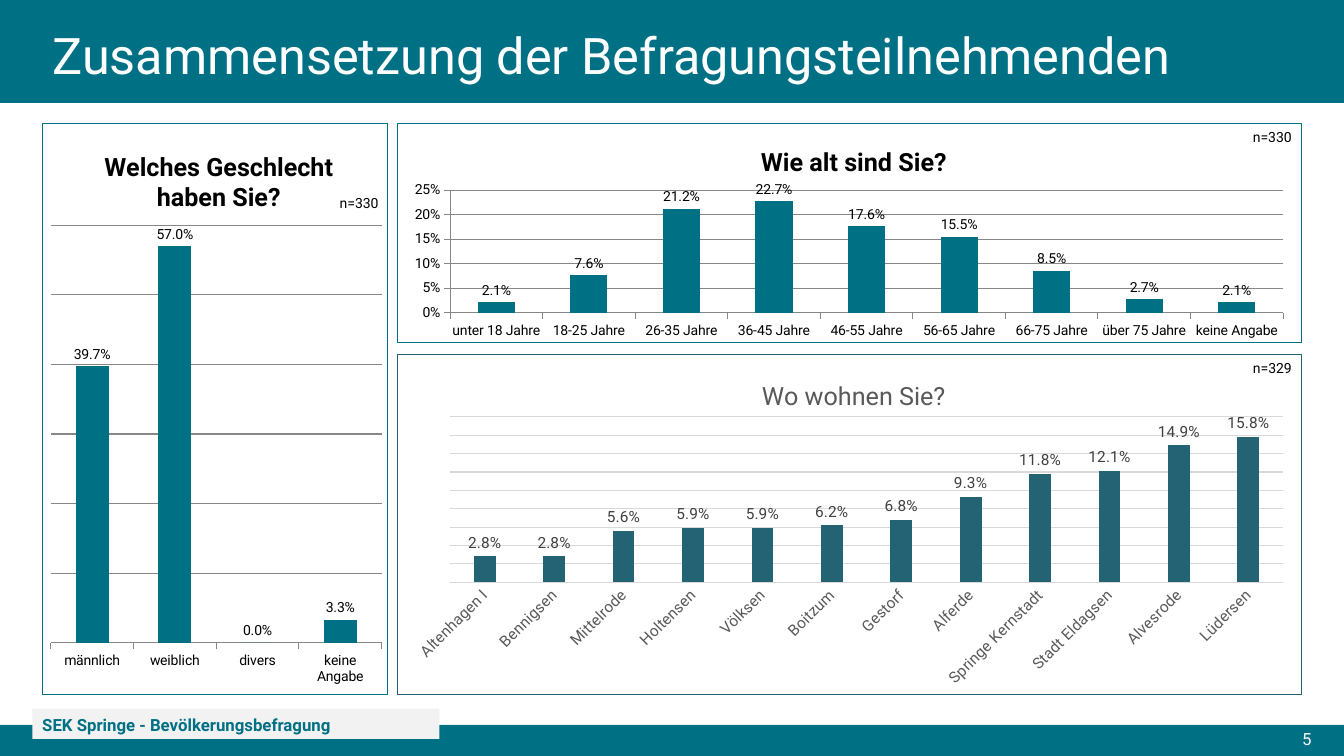
"""Builds the slide on who took part in the survey."""
from dataclasses import dataclass

import lxml.etree
import pptx
import pptx.chart.data
import pptx.dml.color
import pptx.enum.chart
import pptx.enum.shapes
import pptx.enum.text
import pptx.oxml
import pptx.oxml.ns
import pptx.util

FONT = "Roboto"
TEAL, PETROL, WHITE, BLACK = "007085", "246373", "FFFFFF", "000000"
SLIDE_WIDTH, SLIDE_HEIGHT = pptx.util.Inches(13.33), pptx.util.Inches(7.5)
ALIGN = pptx.enum.text.PP_ALIGN
MIDDLE = pptx.enum.text.MSO_ANCHOR.MIDDLE


@dataclass
class Area:
    """Left, top, width and height in percent of the enclosing frame."""
    left: float
    top: float
    width: float
    height: float

    def box(self) -> tuple[int, int, int, int]:
        """Returns the area as slide lengths."""
        return (int(SLIDE_WIDTH * self.left / 100), int(SLIDE_HEIGHT * self.top / 100),
                int(SLIDE_WIDTH * self.width / 100), int(SLIDE_HEIGHT * self.height / 100))


@dataclass
class Question:
    """One survey question with its column chart."""
    title: str
    area: Area
    plot: Area
    title_at: tuple[float, float]
    answers: dict[str, float]
    top: float
    step: float
    sample: str
    sample_area: Area
    color: str = TEAL
    grid: str = "878787"
    label_color: str = BLACK
    axis_color: str = BLACK
    title_color: str = BLACK
    bold: bool = True
    size: int = 10
    gap: int = 150
    overlap: int = 0
    scale: bool = False
    ticks: bool = True
    slanted: bool = False


QUESTIONS = [
    Question("Wo wohnen Sie?", Area(29.55, 46.8, 67.3, 45.2), Area(5.8, 18.4, 92.2, 48.5),
             (39.8, 6),
             {"Altenhagen I": 0.028, "Bennigsen": 0.028, "Mittelrode": 0.056,
              "Holtensen": 0.059, "Völksen": 0.059, "Boitzum": 0.062, "Gestorf": 0.068,
              "Alferde": 0.093, "Springe Kernstadt": 0.118, "Stadt Eldagsen": 0.121,
              "Alvesrode": 0.149, "Lüdersen": 0.158},
             0.18, 0.02, "n=329", Area(91.75, 46.93, 5.1, 3.6), color=PETROL, grid="D9D9D9",
             label_color="404040", axis_color="595959", title_color="595959", bold=False,
             size=11, gap=219, overlap=-27, ticks=False, slanted=True),
    Question("Wie alt sind Sie?", Area(29.55, 16.27, 67.3, 29.07), Area(5.8, 30.5, 92.2, 56),
             (39.7, 8),
             {"unter 18 Jahre": 0.021, "18-25 Jahre": 0.076, "26-35 Jahre": 0.212,
              "36-45 Jahre": 0.227, "46-55 Jahre": 0.176, "56-65 Jahre": 0.155,
              "66-75 Jahre": 0.085, "über 75 Jahre": 0.027, "keine Angabe": 0.021},
             0.25, 0.05, "n=330", Area(91.97, 16.4, 4.88, 3.6), scale=True),
    Question("Welches Geschlecht haben Sie?", Area(3.15, 16.27, 25.72, 75.73),
             Area(2.3, 17.8, 96, 73.1), (16.5, 4),
             {"männlich": 0.397, "weiblich": 0.57, "divers": 0, "keine Angabe": 0.033},
             0.6, 0.1, "n=330", Area(24.3, 25.07, 4.6, 3.6)),
]


def paint(target, color: str) -> None:
    """Gives a fill, line or font a solid colour."""
    if hasattr(target, "solid"):
        target.solid()
        target = target.fore_color
    else:
        target = target.color
    target.rgb = pptx.dml.color.RGBColor.from_string(color)


def style(font, size: float, color: str, bold: bool = False) -> None:
    """Sets face, size, weight and colour of a font."""
    font.name, font.size, font.bold = FONT, pptx.util.Pt(size), bold
    paint(font.fill, color)


def write(frame, text: str, size: float, color: str, align=ALIGN.LEFT,
          bold: bool = False, spacing: float = 1.0) -> None:
    """Writes one run into the first paragraph of a frame."""
    para = frame.paragraphs[0]
    para.alignment, para.line_spacing = align, spacing
    span = para.add_run()
    span.text = text
    style(span.font, size, color, bold)


def add_band(page, area: Area, color: str):
    """Adds a plain filled rectangle."""
    band = page.shapes.add_shape(pptx.enum.shapes.MSO_SHAPE.RECTANGLE, *area.box())
    band.shadow.inherit = False
    paint(band.fill, color)
    band.line.fill.background()
    return band


def add_note(page, area: Area, text: str, size: float, color: str):
    """Adds a right-aligned text box."""
    box = page.shapes.add_textbox(*area.box())
    box.text_frame.word_wrap = True
    write(box.text_frame, text, size, color, ALIGN.RIGHT)
    return box


def place(parent, index: int, values: dict[str, float], inner: bool = False) -> None:
    """Fixes the layout of a chart part."""
    tag = pptx.oxml.ns.qn
    for old in parent.findall(tag("c:layout")):
        parent.remove(old)
    layout = lxml.etree.Element(tag("c:layout"))
    manual = lxml.etree.SubElement(layout, tag("c:manualLayout"))
    settings = {"layoutTarget": "inner"} if inner else {}
    settings |= {"xMode": "edge", "yMode": "edge"}
    settings |= {key: str(round(value / 100, 3)) for key, value in values.items()}
    for key, value in settings.items():
        lxml.etree.SubElement(manual, tag(f"c:{key}")).set("val", value)
    parent.insert(index, layout)


def add_frame(chart, color: str) -> None:
    """Gives the chart a white ground and a thin border."""
    tag = pptx.oxml.ns.qn
    space = chart.element
    space.find(tag("c:chart")).addnext(pptx.oxml.parse_xml(
        f'<c:spPr {pptx.oxml.ns.nsdecls("c", "a")}>'
        f'<a:solidFill><a:srgbClr val="{WHITE}"/></a:solidFill>'
        f'<a:ln w="9525"><a:solidFill><a:srgbClr val="{color}"/></a:solidFill></a:ln>'
        '</c:spPr>'))


def add_question(page, question: Question) -> None:
    """Adds the column chart of one question."""
    kinds = pptx.enum.chart
    data = pptx.chart.data.CategoryChartData(number_format="0.0%")
    data.categories = list(question.answers)
    data.add_series("Series 1", list(question.answers.values()))
    chart = page.shapes.add_chart(kinds.XL_CHART_TYPE.COLUMN_CLUSTERED,
                                  *question.area.box(), data).chart
    style(chart.font, question.size, BLACK)
    chart.has_legend = False
    add_frame(chart, question.color)

    chart.has_title = True
    title = chart.chart_title
    write(title.text_frame, question.title, 18, question.title_color, ALIGN.CENTER, question.bold)
    title.include_in_layout = False
    place(title._element, 1, dict(zip("xy", question.title_at)))
    plot_area = chart.element.find(".//" + pptx.oxml.ns.qn("c:plotArea"))
    area = question.plot
    place(plot_area, 0, dict(x=area.left, y=area.top, w=area.width, h=area.height), True)

    plot = chart.plots[0]
    plot.gap_width, plot.overlap, plot.vary_by_categories = question.gap, question.overlap, False
    paint(plot.series[0].format.fill, question.color)
    plot.has_data_labels = True
    labels = plot.data_labels
    labels.show_value, labels.position = True, kinds.XL_LABEL_POSITION.OUTSIDE_END
    labels.number_format, labels.number_format_is_linked = "0.0%", False
    style(labels.font, question.size, question.label_color)

    marks = kinds.XL_TICK_MARK
    values, names = chart.value_axis, chart.category_axis
    values.minimum_scale, values.maximum_scale = 0, question.top
    values.major_unit, values.visible = question.step, question.scale
    values.has_major_gridlines = True
    values.tick_labels.number_format = "0%"
    values.tick_labels.number_format_is_linked = False
    for line in (values.major_gridlines.format.line, values.format.line, names.format.line):
        paint(line.fill, question.grid)
        line.width = pptx.util.Pt(0.75)
    for axis in (values, names):
        axis.major_tick_mark = marks.OUTSIDE if question.ticks else marks.NONE
        axis.minor_tick_mark = marks.NONE
        style(axis.tick_labels.font, question.size, question.axis_color)
    if question.slanted:
        names._element.find(".//" + pptx.oxml.ns.qn("a:bodyPr")).set("rot", "-2700000")


def main() -> None:
    """Builds and saves the deck."""
    deck = pptx.Presentation()
    deck.slide_width, deck.slide_height = SLIDE_WIDTH, SLIDE_HEIGHT
    page = deck.slides.add_slide(deck.slide_layouts[5])
    add_band(page, Area(0, 0, 100, 13.6), TEAL)
    add_band(page, Area(0, 95.87, 100, 4.13), TEAL)
    number = add_note(page, Area(65.4, 95.73, 32.93, 4), "5", 12, WHITE)
    number.text_frame.vertical_anchor = MIDDLE
    footer = add_band(page, Area(2.4, 93.73, 30.3, 4), "F2F2F2")
    footer.text_frame.vertical_anchor = MIDDLE
    write(footer.text_frame, "SEK Springe - Bevölkerungsbefragung", 12, TEAL,
          bold=True, spacing=1.07)
    for question in QUESTIONS:
        add_question(page, question)
    title = page.shapes.title
    title.left, title.top, title.width, title.height = Area(3.15, 2.8, 86.25, 9.73).box()
    title.text_frame.vertical_anchor = MIDDLE
    title.text_frame.auto_size = pptx.enum.text.MSO_AUTO_SIZE.NONE
    write(title.text_frame, "Zusammensetzung der Befragungsteilnehmenden", 36, WHITE, spacing=0.9)
    title.element.getparent().append(title.element)
    for question in QUESTIONS:
        add_note(page, question.sample_area, question.sample, 10, BLACK)
    deck.save("out.pptx")


if __name__ == "__main__":
    main()
